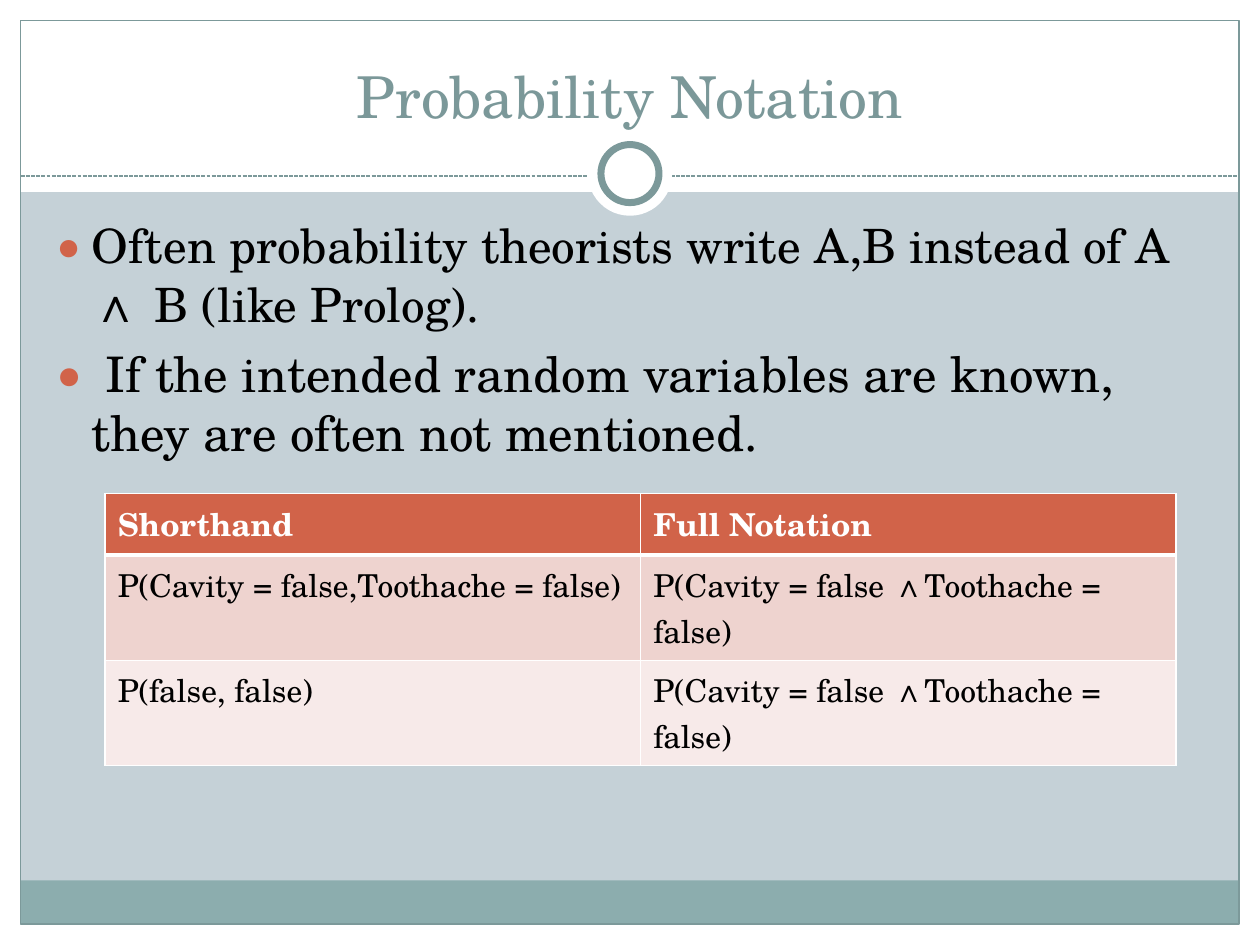
from lxml.etree import SubElement
from pptx import Presentation
from pptx.dml.color import RGBColor
from pptx.enum.dml import MSO_LINE
from pptx.enum.shapes import MSO_CONNECTOR, MSO_SHAPE
from pptx.enum.text import MSO_ANCHOR, PP_ALIGN
from pptx.oxml.ns import qn
from pptx.util import Cm, Pt

FONT = "TeX Gyre Schola"
WHITE = RGBColor(0xFF, 0xFF, 0xFF)
BLACK = RGBColor(0, 0, 0)
BACKGROUND = RGBColor(0xC5, 0xD1, 0xD7)
FOOTER = RGBColor(0x8C, 0xAD, 0xAE)
FRAME = RGBColor(0x7C, 0x99, 0x9A)
TITLE = RGBColor(0x7B, 0x98, 0x99)
ACCENT = RGBColor(0xD1, 0x63, 0x49)
ROW_FILLS = [ACCENT, RGBColor(0xEE, 0xD3, 0xCF), RGBColor(0xF7, 0xEA, 0xE9)]

WIDTH, HEIGHT, MARGIN = 25.4, 19.05, 0.42
INNER = WIDTH - 2 * MARGIN
RULE_Y, RING_Y = 3.55, 3.5
HEADER_HEIGHT, ROW_HEIGHT = 1.24, 2.12

BULLETS = [
    [("Often probability theorists write A,B instead of A ", 27),
     ("∧ ", 28),
     ("B (like Prolog).", 27)],
    [(" If the intended random variables are known, they are often not mentioned.", 28)],
]
NOTATION = [
    ("Shorthand", "Full Notation"),
    ("P(Cavity = false,Toothache = false)", "P(Cavity = false ∧Toothache = false)"),
    ("P(false, false)", "P(Cavity = false ∧Toothache = false)"),
]


def add_panel(slide, left, top, width, height, fill=None, line=None, weight=0.75,
              kind=MSO_SHAPE.RECTANGLE):
    """Add a preset shape with an optional fill and outline."""
    sp = slide.shapes.add_shape(kind, Cm(left), Cm(top), Cm(width), Cm(height))
    sp.shadow.inherit = False
    if fill is None:
        sp.fill.background()
    else:
        sp.fill.solid()
        sp.fill.fore_color.rgb = fill
    if line is None:
        sp.line.fill.background()
    else:
        sp.line.color.rgb = line
        sp.line.width = Pt(weight)


def add_circle(slide, center_y, size, **style):
    """Add a white circle centred across the slide."""
    add_panel(slide, (WIDTH - size) / 2, center_y - size / 2, size, size,
              fill=WHITE, kind=MSO_SHAPE.OVAL, **style)


def add_dashed_rule(slide, y):
    """Add the dashed line across the frame."""
    rule = slide.shapes.add_connector(MSO_CONNECTOR.STRAIGHT, Cm(MARGIN), Cm(y),
                                      Cm(WIDTH - MARGIN), Cm(y))
    rule.line.color.rgb = FRAME
    rule.line.width = Pt(0.75)
    rule.line.dash_style = MSO_LINE.SQUARE_DOT
    SubElement(rule._element.spPr, qn("a:effectLst"))


def add_run(p, text, size=18, color=BLACK, bold=False):
    """Append a formatted run to a paragraph."""
    r = p.add_run()
    r.text = text
    r.font.name = FONT
    r.font.size = Pt(size)
    r.font.bold = bold
    r.font.color.rgb = color


def add_text_frame(slide, left, top, width, height, anchor=MSO_ANCHOR.TOP):
    """Add a wrapping text box and return its text frame."""
    tf = slide.shapes.add_textbox(Cm(left), Cm(top), Cm(width), Cm(height)).text_frame
    tf.word_wrap = True
    tf.vertical_anchor = anchor
    return tf


def set_bullet(p):
    """Give a paragraph a hanging accent-coloured bullet."""
    props = p._p.get_or_add_pPr()
    props.set("marL", str(Cm(0.76)))
    props.set("indent", str(-Cm(0.76)))
    color = SubElement(props, qn("a:buClr"))
    SubElement(color, qn("a:srgbClr"), val=str(ACCENT))
    SubElement(props, qn("a:buSzPct"), val="85000")
    SubElement(props, qn("a:buFont"), typeface=FONT)
    SubElement(props, qn("a:buChar"), char="●")


def add_bullets(slide, items):
    """Add the bulleted body text."""
    tf = add_text_frame(slide, 0.84, 4.24, 23.62, 12.7)
    for i, runs in enumerate(items):
        p = tf.add_paragraph() if i else tf.paragraphs[0]
        p.space_before = Pt(6.5)
        set_bullet(p)
        for text, size in runs:
            add_run(p, text, size=size)


def set_borders(cell, top, bottom):
    """Draw white cell borders with the given top and bottom weights."""
    props = cell._tc.get_or_add_tcPr()
    weights = {"lnL": 1, "lnR": 1, "lnT": top, "lnB": bottom}
    for i, (tag, weight) in enumerate(weights.items()):
        ln = SubElement(props, qn(f"a:{tag}"), w=str(Pt(weight)))
        fill = SubElement(ln, qn("a:solidFill"))
        SubElement(fill, qn("a:srgbClr"), val=str(WHITE))
        props.insert(i, ln)


def add_notation_table(slide, rows):
    """Add the table of shorthand and full notation."""
    height = HEADER_HEIGHT + ROW_HEIGHT * (len(rows) - 1)
    table = slide.shapes.add_table(len(rows), len(rows[0]), Cm(2.12), Cm(9.95),
                                   Cm(21.59), Cm(height)).table
    for i, row in enumerate(rows):
        header = i == 0
        table.rows[i].height = Cm(HEADER_HEIGHT if header else ROW_HEIGHT)
        for j, text in enumerate(row):
            cell = table.cell(i, j)
            cell.fill.solid()
            cell.fill.fore_color.rgb = ROW_FILLS[i]
            set_borders(cell, top=3 if i == 1 else 1, bottom=3 if header else 1)
            add_run(cell.text_frame.paragraphs[0], text,
                    color=WHITE if header else BLACK, bold=header)


def add_frame(slide):
    """Add the white margins, footer band, outline and ring."""
    add_panel(slide, 0, HEIGHT - MARGIN, WIDTH, MARGIN, fill=WHITE)
    add_panel(slide, 0, 0, WIDTH, 3.87, fill=WHITE)
    for left in (0, WIDTH - MARGIN):
        add_panel(slide, left, 0, MARGIN, HEIGHT, fill=WHITE)
    add_panel(slide, MARGIN, 17.75, INNER, 0.87, fill=FOOTER)
    add_panel(slide, MARGIN, MARGIN, INNER, HEIGHT - 2 * MARGIN, line=FRAME)
    add_dashed_rule(slide, RULE_Y)
    add_circle(slide, RING_Y, 1.7)
    add_circle(slide, RING_Y, 1.17, line=FRAME, weight=4)


def main():
    """Build and save the slide."""
    prs = Presentation()
    prs.slide_width, prs.slide_height = Cm(WIDTH), Cm(HEIGHT)
    slide = prs.slides.add_slide(prs.slide_layouts[6])
    slide.background.fill.solid()
    slide.background.fill.fore_color.rgb = BACKGROUND
    add_frame(slide)
    tf = add_text_frame(slide, 0.85, 0.62, 23.7, 2.12, MSO_ANCHOR.BOTTOM)
    p = tf.paragraphs[0]
    p.alignment = PP_ALIGN.CENTER
    add_run(p, "Probability Notation", size=33, color=TITLE)
    add_bullets(slide, BULLETS)
    add_notation_table(slide, NOTATION)
    prs.save("out.pptx")


if __name__ == "__main__":
    main()
